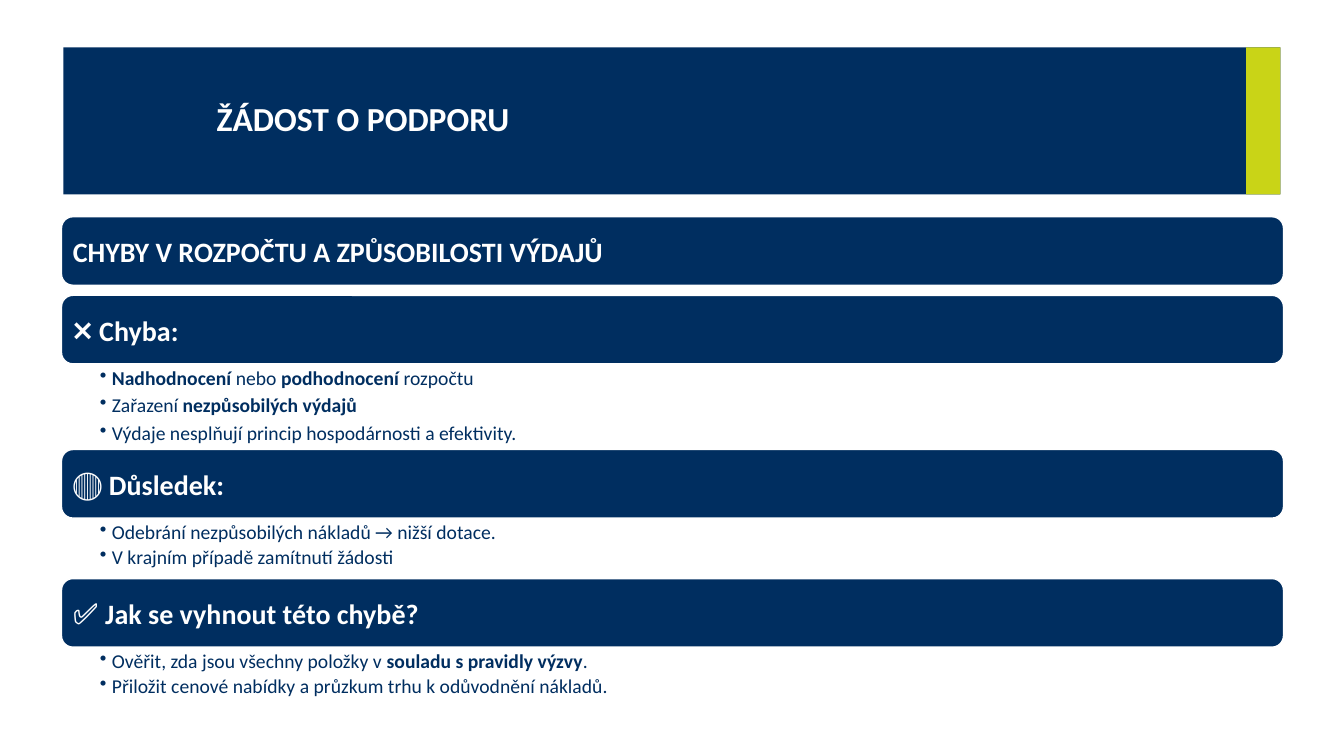
from lxml import etree
from pptx import Presentation
from pptx.dml.color import RGBColor
from pptx.enum import shapes, text
from pptx.oxml import ns
from pptx.util import Inches, Pt

NAVY = RGBColor(0x00, 0x2E, 0x60)
LIME = RGBColor(0xC9, 0xD4, 0x17)
WHITE = RGBColor(0xFF, 0xFF, 0xFF)
LEFT, WIDTH, BAR_H = 0.61, 12.12, 0.68

SECTIONS = [
    (2.15, [("CHYBY V ROZPOČTU A ZPŮSOBILOSTI VÝDAJŮ", 20)], 0, []),
    (2.93, [("❌ ", 21), ("Chyba:", 20)], 0.86, [
        (1, [("Nadhodnocení ", True), ("nebo", False),
             (" podhodnocení ", True), ("rozpočtu", False)]),
        (1, [("Zařazení ", False), ("nezpůsobilých výdajů", True)]),
        (1, [("Výdaje nesplňují princip hospodárnosti a efektivity.", False)]),
    ]),
    (4.46, [("🔴 ", 21), ("Důsledek:", 20)], 0.6, [
        (1, [("Odebrání nezpůsobilých nákladů → nižší dotace.", False)]),
        (0.9, [("V krajním případě zamítnutí žádosti", False)]),
    ]),
    (5.74, [("✅ ", 21), ("Jak se vyhnout této chybě?", 20)], 0.6, [
        (1, [("Ověřit, zda jsou všechny položky v ", False),
             ("souladu s pravidly výzvy", True), (".", False)]),
        (0.9, [("Přiložit cenové nabídky a průzkum trhu k odůvodnění nákladů.", False)]),
    ]),
]


def add_run(p, content, size, color, bold):
    r = p.add_run()
    r.text = content
    r.font.name = "Calibri"
    r.font.size = Pt(size)
    r.font.bold = bold
    r.font.color.rgb = color


def set_frame(tf, anchor, left, top, right, bottom):
    tf.word_wrap = True
    tf.vertical_anchor = anchor
    tf.margin_left, tf.margin_top = Inches(left), Inches(top)
    tf.margin_right, tf.margin_bottom = Inches(right), Inches(bottom)


def add_box(s, kind, x, y, w, h, fill):
    sp = s.shapes.add_shape(kind, Inches(x), Inches(y), Inches(w), Inches(h))
    sp.shadow.inherit = False
    sp.fill.solid()
    sp.fill.fore_color.rgb = fill
    sp.line.fill.background()
    return sp


def add_header(s, x, y, w, h, title):
    rect = shapes.MSO_SHAPE.RECTANGLE
    add_box(s, rect, x, y, w, h, NAVY)
    add_box(s, rect, x + w - 0.34, y, 0.34, h, LIME)
    tb = s.shapes.add_textbox(Inches(x + 1.52), Inches(y), Inches(9.96), Inches(h))
    set_frame(tb.text_frame, text.MSO_ANCHOR.MIDDLE, 0, 0, 0, 0)
    p = tb.text_frame.paragraphs[0]
    p.line_spacing = 0.9
    add_run(p, title, 24, WHITE, True)


def add_bar(s, x, y, w, h, runs):
    sp = add_box(s, shapes.MSO_SHAPE.ROUNDED_RECTANGLE, x, y, w, h, NAVY)
    sp.line.color.rgb = WHITE
    sp.line.width = Pt(1)
    set_frame(sp.text_frame, text.MSO_ANCHOR.MIDDLE, 0.08, 0.08, 0.08, 0.08)
    p = sp.text_frame.paragraphs[0]
    p.alignment = text.PP_ALIGN.LEFT
    for content, size in runs:
        add_run(p, content, size, WHITE, True)


def add_bullets(s, x, y, w, h, items):
    tb = s.shapes.add_textbox(Inches(x), Inches(y), Inches(w), Inches(h))
    tf = tb.text_frame
    set_frame(tf, text.MSO_ANCHOR.TOP, 0.38, 0.02, 0.11, 0.02)
    for i, (spacing, runs) in enumerate(items):
        p = tf.add_paragraph() if i else tf.paragraphs[0]
        p.level = 1
        p.line_spacing = spacing
        p.space_after = Pt(2.8)
        pPr = p._p.get_or_add_pPr()
        pPr.set("marL", str(Inches(0.12)))
        pPr.set("indent", str(-Inches(0.12)))
        etree.SubElement(pPr, ns.qn("a:buChar")).set("char", "•")
        for content, bold in runs:
            add_run(p, content, 14, NAVY, bold)


def add_section(s, x, y, w, heading, body_h, items):
    add_bar(s, x, y, w, BAR_H, heading)
    if items:
        add_bullets(s, x, y + BAR_H, w, body_h, items)


def main():
    prs = Presentation()
    prs.slide_width, prs.slide_height = Inches(13.33), Inches(7.5)
    s = prs.slides.add_slide(prs.slide_layouts[6])
    add_header(s, 0.63, 0.47, 12.07, 1.46, "ŽÁDOST O PODPORU")
    for y, heading, body_h, items in SECTIONS:
        add_section(s, LEFT, y, WIDTH, heading, body_h, items)
    prs.save("out.pptx")


if __name__ == "__main__":
    main()
